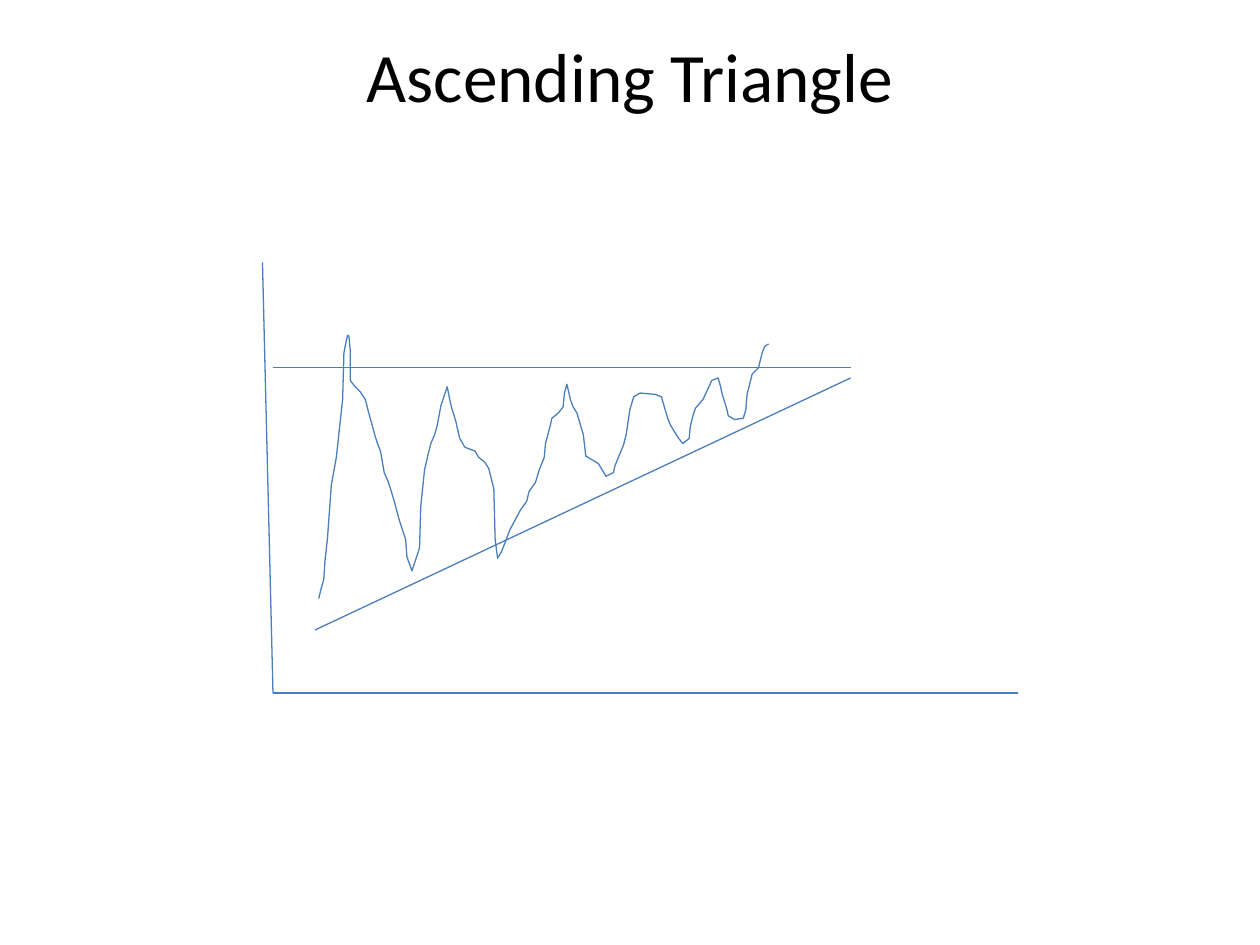
from pptx import Presentation
from pptx.dml.color import RGBColor
from pptx.enum.shapes import MSO_CONNECTOR as Connector
from pptx.enum.text import MSO_ANCHOR as Anchor, PP_ALIGN as Align
from pptx.oxml.ns import qn
from pptx.util import Inches, Pt
from lxml import etree

COLORS = {"title": "000000", "line": "4B7EBC"}
TITLE_FONT = {"name": "Calibri", "size": Pt(39.6), "bold": False}
TITLE_FRAME = {
    "word_wrap": True,
    "vertical_anchor": Anchor.MIDDLE,
    "margin_bottom": Inches(0.72),
}
# The straight lines lie on a grid of twelfths of an inch.
GRID = 12
ORIGIN = (26, 66)
TIME_AXIS = (ORIGIN, (97, 66))
PRICE_AXIS = (ORIGIN, (25, 25))
RESISTANCE = ((26, 35), (81, 35))
SUPPORT = ((81, 36), (30, 60))
# Price swings, each a rise to a peak and the fall after it, in hundredths of an inch.
SWINGS = [
    [(253, 475), (255, 467), (257, 460), (258, 445), (260, 427), (263, 385), (267, 363),
     (272, 317), (273, 280), (275, 270), (276, 266), (277, 267), (278, 278), (278, 302),
     (282, 307), (286, 311), (290, 317), (292, 325), (298, 347), (300, 353), (302, 358),
     (305, 375), (308, 382), (310, 388), (313, 398), (317, 413), (322, 428), (323, 442),
     (327, 453)],
    [(333, 435), (334, 402), (337, 373), (340, 360), (342, 352), (345, 345), (347, 338),
     (350, 322), (355, 307), (357, 317), (358, 322), (362, 335), (363, 340), (365, 348),
     (369, 355), (377, 358), (380, 363), (385, 367), (388, 372), (392, 388), (393, 428),
     (395, 443)],
    [(398, 438), (400, 433), (403, 425), (405, 420), (413, 405), (418, 398), (420, 390),
     (425, 383), (428, 373), (432, 363), (433, 352), (437, 337), (438, 332), (443, 328),
     (447, 323), (448, 312), (450, 305), (453, 318), (455, 323), (458, 328), (463, 345),
     (465, 362), (475, 368), (481, 378)],
    [(487, 375), (488, 370), (495, 353), (497, 345), (500, 325), (503, 315), (508, 312),
     (520, 313), (525, 315), (530, 332), (532, 337), (538, 347), (542, 352)],
    [(547, 348), (548, 338), (550, 330), (552, 324), (558, 317), (565, 302), (570, 300),
     (572, 307), (573, 312), (577, 325), (578, 330), (583, 333), (590, 332)],
    [(592, 325), (593, 313), (597, 297), (602, 292), (605, 280), (607, 275), (610, 273)],
]


def rgb(name):
    return RGBColor.from_string(COLORS[name])


def set_values(target, values):
    for key, value in values.items():
        setattr(target, key, value)


def style_line(shape):
    shape.line.color.rgb = rgb("line")
    shape.line.width = Pt(0.75)


def add_title(page, text):
    box = page.shapes.add_textbox(Inches(0.5), Inches(0.3), Inches(9), Inches(1.25))
    set_values(box.text_frame, TITLE_FRAME)
    para = box.text_frame.paragraphs[0]
    para.alignment = Align.CENTER
    span = para.add_run()
    span.text = text
    set_values(span.font, TITLE_FONT)
    span.font.color.rgb = rgb("title")


def add_line(page, start, end):
    """Draw a straight line between two grid points."""
    line = page.shapes.add_connector(
        Connector.STRAIGHT, *(Inches(value / GRID) for value in (*start, *end)))
    style_line(line)
    etree.SubElement(line.element.spPr, qn("a:effectLst"))


def add_price_curve(page):
    points = [point for swing in SWINGS for point in swing]
    builder = page.shapes.build_freeform(*points[0], scale=Inches(0.01))
    builder.add_line_segments(points[1:], close=False)
    curve = builder.convert_to_shape()
    curve.fill.background()
    style_line(curve)
    curve.shadow.inherit = False


def main():
    deck = Presentation()
    deck.slide_width, deck.slide_height = Inches(10), Inches(7.5)
    page = deck.slides.add_slide(deck.slide_layouts[6])
    add_title(page, "Ascending Triangle")
    for start, end in (TIME_AXIS, PRICE_AXIS, RESISTANCE, SUPPORT):
        add_line(page, start, end)
    add_price_curve(page)
    deck.save("out.pptx")


if __name__ == "__main__":
    main()
